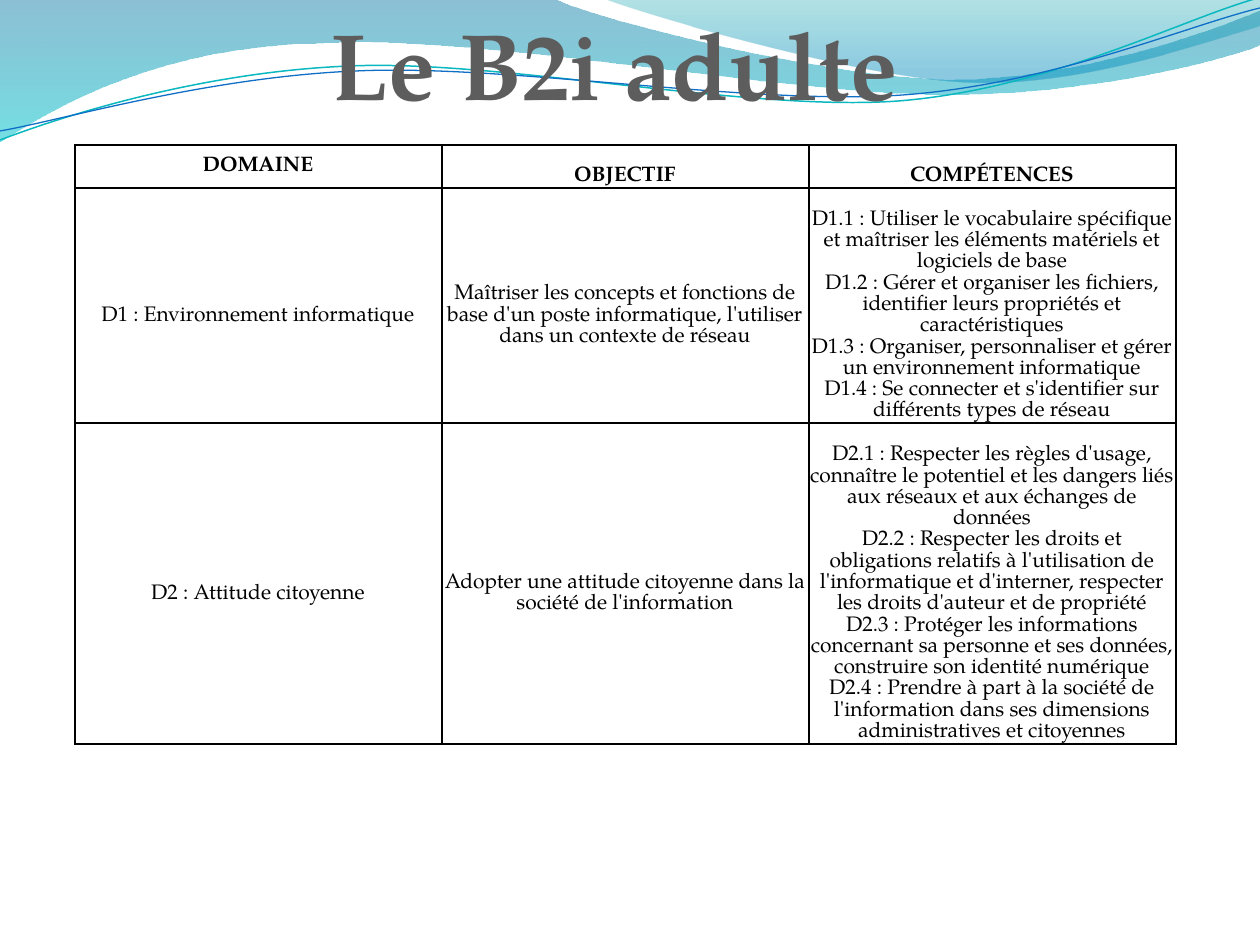
from dataclasses import dataclass

from lxml import etree
from pptx import Presentation
from pptx.dml.color import RGBColor
from pptx.enum.text import MSO_ANCHOR, MSO_AUTO_SIZE, PP_ALIGN
from pptx.oxml.ns import qn
from pptx.util import Emu, Pt

CENTER = PP_ALIGN.CENTER
MIDDLE = MSO_ANCHOR.MIDDLE
FIT_SHAPE = MSO_AUTO_SIZE.SHAPE_TO_FIT_TEXT
EMU_PER_PX = 914400 / 126


@dataclass(frozen=True)
class Theme:
    font: str = "TeX Gyre Pagella"
    title_size: int = 54
    table_size: int = 12
    table_leading: float = 12.15
    title: str = "5D5D5D"
    ink: str = "000000"
    border_width: int = 1
    wave_left: tuple = (("0074A1", 45, 0), ("00C6CF", 55, 1))
    wave_right: tuple = (("00A1A9", 30, 0), ("008BBF", 45, 0.8))
    thread_teal: str = "0AB8BF"
    thread_blue: str = "0F6FC6"


def px(value):
    return Emu(round(value * EMU_PER_PX))


class Page:
    def __init__(self, deck, theme):
        self.theme = theme
        self.slide = deck.slides.add_slide(deck.slide_layouts[6])

    def outline(self, start, segments, close):
        builder = self.slide.shapes.build_freeform(px(start[0]), px(start[1]))
        points = [(px(x), px(y)) for segment in segments for x, y in segment]
        builder.add_line_segments(points, close=close)
        shape = builder.convert_to_shape()
        shape.shadow.inherit = False
        lines = iter(list(shape._element.iter(qn("a:lnTo"))))
        for segment in segments:
            steps = [next(lines) for _ in segment]
            if len(steps) == 3:
                curve = etree.Element(qn("a:cubicBezTo"))
                steps[0].addprevious(curve)
                for step in steps:
                    curve.append(step[0])
                    step.getparent().remove(step)
        return shape

    def wave(self, start, segments, stops):
        shape = self.outline(start, segments, True)
        shape.line.fill.background()
        shape.fill.gradient()
        shape.fill.gradient_angle = 270
        for stop, (color, _, position) in zip(shape.fill.gradient_stops, stops):
            stop.color.rgb = RGBColor.from_string(color)
            stop.position = position
        colors = shape._element.spPr.iter(qn("a:srgbClr"))
        for element, (_, opacity, _) in zip(colors, stops):
            etree.SubElement(element, qn("a:alpha"), val=str(opacity * 1000))

    def thread(self, start, segments, color, width):
        shape = self.outline(start, segments, False)
        shape.fill.background()
        shape.line.color.rgb = RGBColor.from_string(color)
        shape.line.width = Pt(width)

    def span(self, para, text, size, color, bold):
        span = para.add_run()
        span.text = text
        span.font.name = self.theme.font
        span.font.size = Pt(size)
        span.font.bold = bold
        span.font.color.rgb = RGBColor.from_string(color)

    def title(self, text, left, top, width, height):
        box = self.slide.shapes.add_textbox(px(left), px(top), px(width), px(height))
        box.text_frame.word_wrap = False
        box.text_frame.auto_size = FIT_SHAPE
        para = box.text_frame.paragraphs[0]
        para.alignment = CENTER
        self.span(para, text, self.theme.title_size, self.theme.title, True)

    def border(self, cell):
        properties = cell._tc.get_or_add_tcPr()
        for index, side in enumerate(("lnL", "lnR", "lnT", "lnB")):
            line = etree.Element(qn(f"a:{side}"), w=str(Pt(self.theme.border_width)))
            fill = etree.SubElement(line, qn("a:solidFill"))
            etree.SubElement(fill, qn("a:srgbClr"), val=self.theme.ink)
            properties.insert(index, line)

    def cell(self, cell, lines, top_margin, bold):
        cell.fill.background()
        cell.vertical_anchor = MIDDLE
        cell.margin_left, cell.margin_right = px(1), px(2)
        cell.margin_top, cell.margin_bottom = px(top_margin), px(0)
        para = cell.text_frame.paragraphs[0]
        para.alignment = CENTER
        para.line_spacing = Pt(self.theme.table_leading)
        for index, line in enumerate(lines):
            if index:
                para.add_line_break()
            self.span(para, line, self.theme.table_size, self.theme.ink, bold)
        self.border(cell)

    def table(self, rows, left, top, column_width, heights):
        columns = len(rows[0])
        table = self.slide.shapes.add_table(
            len(rows), columns, px(left), px(top),
            px(column_width * columns), px(sum(heights)),
        ).table
        table.first_row = table.horz_banding = False
        for column in table.columns:
            column.width = px(column_width)
        for r, (row, height) in enumerate(zip(rows, heights)):
            table.rows[r].height = px(height)
            for c, lines in enumerate(row):
                header_margin = 19 if c else 0
                top_margin = 22 if r else header_margin
                self.cell(table.cell(r, c), lines, top_margin, r == 0)


ROWS = [
    [["DOMAINE"], ["OBJECTIF"], ["COMPÉTENCES"]],
    [
        ["D1 : Environnement informatique"],
        ["Maîtriser les concepts et fonctions de base d'un poste informatique, "
         "l'utiliser dans un contexte de réseau"],
        ["D1.1 : Utiliser le vocabulaire spécifique et maîtriser les éléments "
         "matériels et logiciels de base",
         "D1.2 : Gérer et organiser les fichiers, identifier leurs propriétés "
         "et caractéristiques",
         "D1.3 : Organiser, personnaliser et gérer un environnement informatique",
         "D1.4 : Se connecter et s'identifier sur différents types de réseau"],
    ],
    [
        ["D2 : Attitude citoyenne"],
        ["Adopter une attitude citoyenne dans la société de l'information"],
        ["D2.1 : Respecter les règles d'usage, connaître le potentiel et les "
         "dangers liés aux réseaux et aux échanges de données",
         "D2.2 : Respecter les droits et obligations relatifs à l'utilisation de "
         "l'informatique et d'interner, respecter les droits d'auteur et de propriété",
         "D2.3 : Protéger les informations concernant sa personne et ses données, "
         "construire son identité numérique",
         "D2.4 : Prendre à part à la société de l'information dans ses dimensions "
         "administratives et citoyennes"],
    ],
]


def main():
    deck = Presentation()
    deck.slide_width, deck.slide_height = px(1260), px(945)
    theme = Theme()
    page = Page(deck, theme)
    page.wave((0, 0), [
        [(554, -1)],
        [(600, 21), (837, 79), (955, 79)],
        [(1075, 79), (1207, 33), (1260, 11)],
        [(1261, 45)],
        [(1239, 55), (1096, 96), (940, 94)],
        [(784, 94), (481, 35), (324, 43)],
        [(163, 45), (58, 105), (-1, 142)],
    ], theme.wave_left)
    page.wave((604, -1), [
        [(641, 14), (859, 78), (969, 82)],
        [(1079, 87), (1211, 40), (1260, 26)],
        [(1260, 0)],
    ], theme.wave_right)
    page.thread((0, 140), [
        [(60, 117), (199, 72), (349, 66)],
        [(498, 59), (747, 112), (898, 101)],
        [(1050, 89), (1182, 19), (1258, -2)],
    ], theme.thread_teal, 0.85)
    page.thread((0, 131), [
        [(59, 121), (207, 77), (357, 71)],
        [(508, 64), (752, 106), (903, 95)],
        [(1053, 84), (1186, 26), (1260, 8)],
    ], theme.thread_blue, 0.75)
    page.table(ROWS, 75, 145, 367, (43, 235, 321))
    page.title("Le B2i adulte", 312, 0, 604, 127)
    deck.save("out.pptx")


if __name__ == "__main__":
    main()
